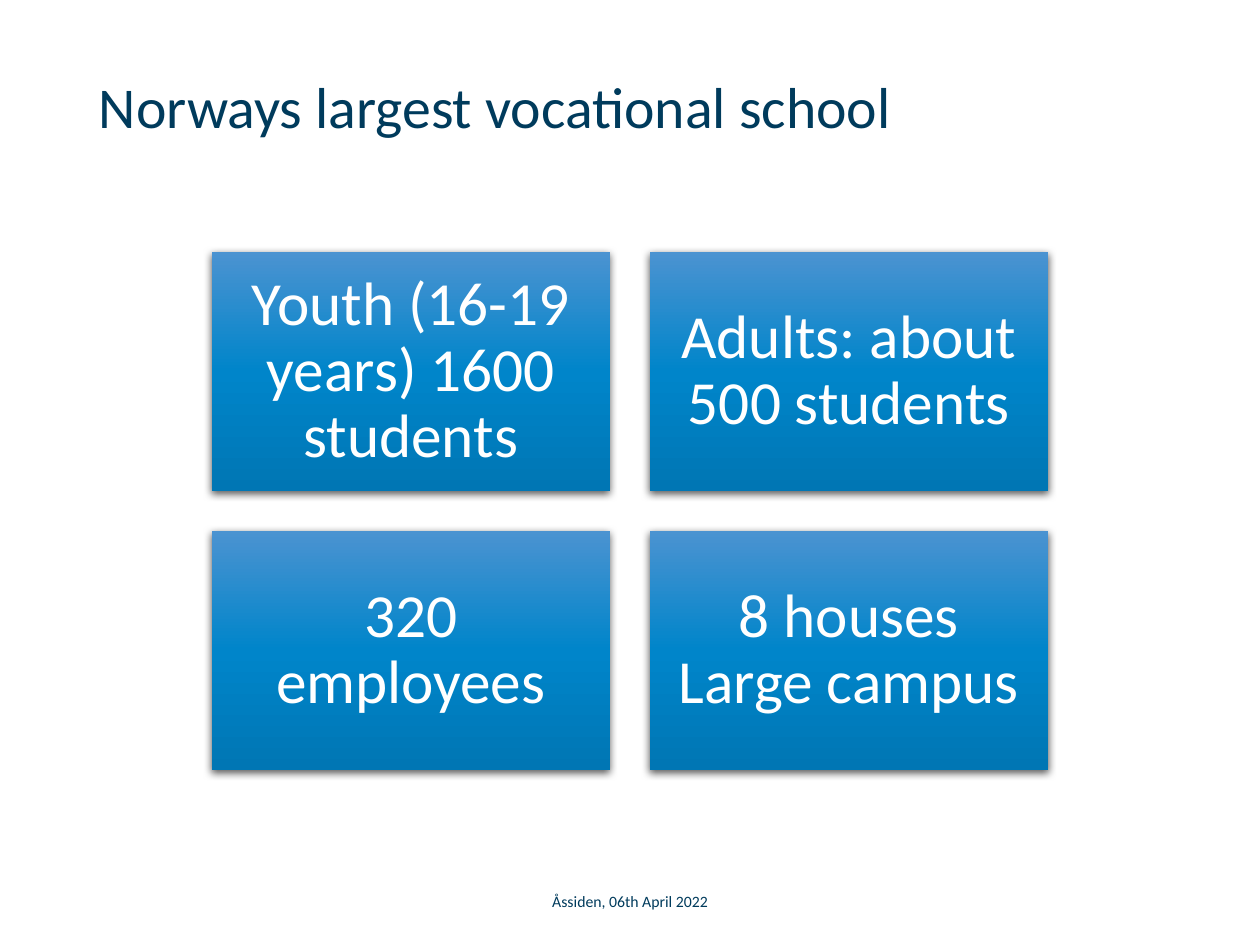
from pptx import Presentation
from pptx.dml.color import RGBColor
from pptx.enum.shapes import MSO_SHAPE
from pptx.enum.text import MSO_ANCHOR, PP_ALIGN
from pptx.oxml import parse_xml
from pptx.oxml.ns import nsdecls
from pptx.util import Pt

COLORS = {
    "navy": "003B5C",
    "white": "FFFFFF",
    "shadow": "000000",
    "card_top": "4B93D1",
    "card_middle": "0085CA",
    "card_bottom": "0076B4",
}
FONT = "Calibri"
SLIDE_WIDTH, SLIDE_HEIGHT = 720, 540
CARDS = [
    ["Youth (16-19 years) 1600 students"],
    ["Adults: about 500 students"],
    ["320 employees"],
    ["8 houses", "Large campus"],
]


def write_text(shape, lines, size, color, alignment, line_spacing=1.0):
    frame = shape.text_frame
    frame.word_wrap = True
    paragraph = frame.paragraphs[0]
    paragraph.alignment = alignment
    paragraph.line_spacing = line_spacing
    for index, line in enumerate(lines):
        if index:
            paragraph.add_line_break()
        run = paragraph.add_run()
        run.text = line
        run.font.name = FONT
        run.font.size = Pt(size)
        run.font.color.rgb = RGBColor.from_string(COLORS[color])
    return frame


def add_title(slide, left, top, width, height):
    box = slide.shapes.add_textbox(Pt(left), Pt(top), Pt(width), Pt(height))
    frame = write_text(box, ["Norways largest vocational school"], 33, "navy", PP_ALIGN.LEFT, 0.9)
    frame.vertical_anchor = MSO_ANCHOR.TOP
    frame.margin_top = Pt(16)


def add_footer(slide, left, top, width, height):
    box = slide.shapes.add_textbox(Pt(left), Pt(top), Pt(width), Pt(height))
    frame = write_text(box, ["Åssiden, 06th April 2022"], 9, "navy", PP_ALIGN.CENTER)
    frame.vertical_anchor = MSO_ANCHOR.MIDDLE


def style_card(shape):
    stops = "".join(
        f'<a:gs pos="{position * 1000}"><a:srgbClr val="{COLORS[name]}"/></a:gs>'
        for position, name in ((0, "card_top"), (50, "card_middle"), (100, "card_bottom"))
    )
    properties = shape._element.spPr
    properties.append(parse_xml(
        f'<a:gradFill {nsdecls("a")} rotWithShape="1"><a:gsLst>{stops}</a:gsLst>'
        '<a:lin ang="5400000" scaled="0"/></a:gradFill>'
    ))
    shape.line.fill.background()
    properties.append(parse_xml(
        f'<a:effectLst {nsdecls("a")}><a:outerShdw blurRad="{Pt(4.5)}" dist="{Pt(1.5)}" '
        f'dir="5400000" algn="ctr" rotWithShape="0"><a:srgbClr val="{COLORS["shadow"]}">'
        '<a:alpha val="63000"/></a:srgbClr></a:outerShdw></a:effectLst>'
    ))


def add_card(slide, lines, left, top, width, height):
    card = slide.shapes.add_shape(MSO_SHAPE.RECTANGLE, Pt(left), Pt(top), Pt(width), Pt(height))
    style_card(card)
    frame = write_text(card, lines, 35, "white", PP_ALIGN.CENTER, 0.9)
    frame.vertical_anchor = MSO_ANCHOR.MIDDLE
    frame.margin_left = frame.margin_right = Pt(10.5)
    frame.margin_top = frame.margin_bottom = Pt(10.5)


def add_card_grid(slide, cards, left, top, width, columns=2):
    card_width = width / (columns + 0.1 * (columns - 1))
    card_height = 0.6 * card_width
    gap = 0.1 * card_width
    for index, lines in enumerate(cards):
        row, column = divmod(index, columns)
        add_card(
            slide,
            lines,
            left + column * (card_width + gap),
            top + row * (card_height + gap),
            card_width,
            card_height,
        )


def main():
    presentation = Presentation()
    presentation.slide_width = Pt(SLIDE_WIDTH)
    presentation.slide_height = Pt(SLIDE_HEIGHT)
    slide = presentation.slides.add_slide(presentation.slide_layouts[6])
    add_title(slide, 49.5, 28.75, 621, 104.4)
    add_footer(slide, 238.5, 500.5, 243, 28.75)
    grid_width = 478
    add_card_grid(slide, CARDS, (SLIDE_WIDTH - grid_width) / 2, 144, grid_width)
    presentation.save("out.pptx")


if __name__ == "__main__":
    main()
